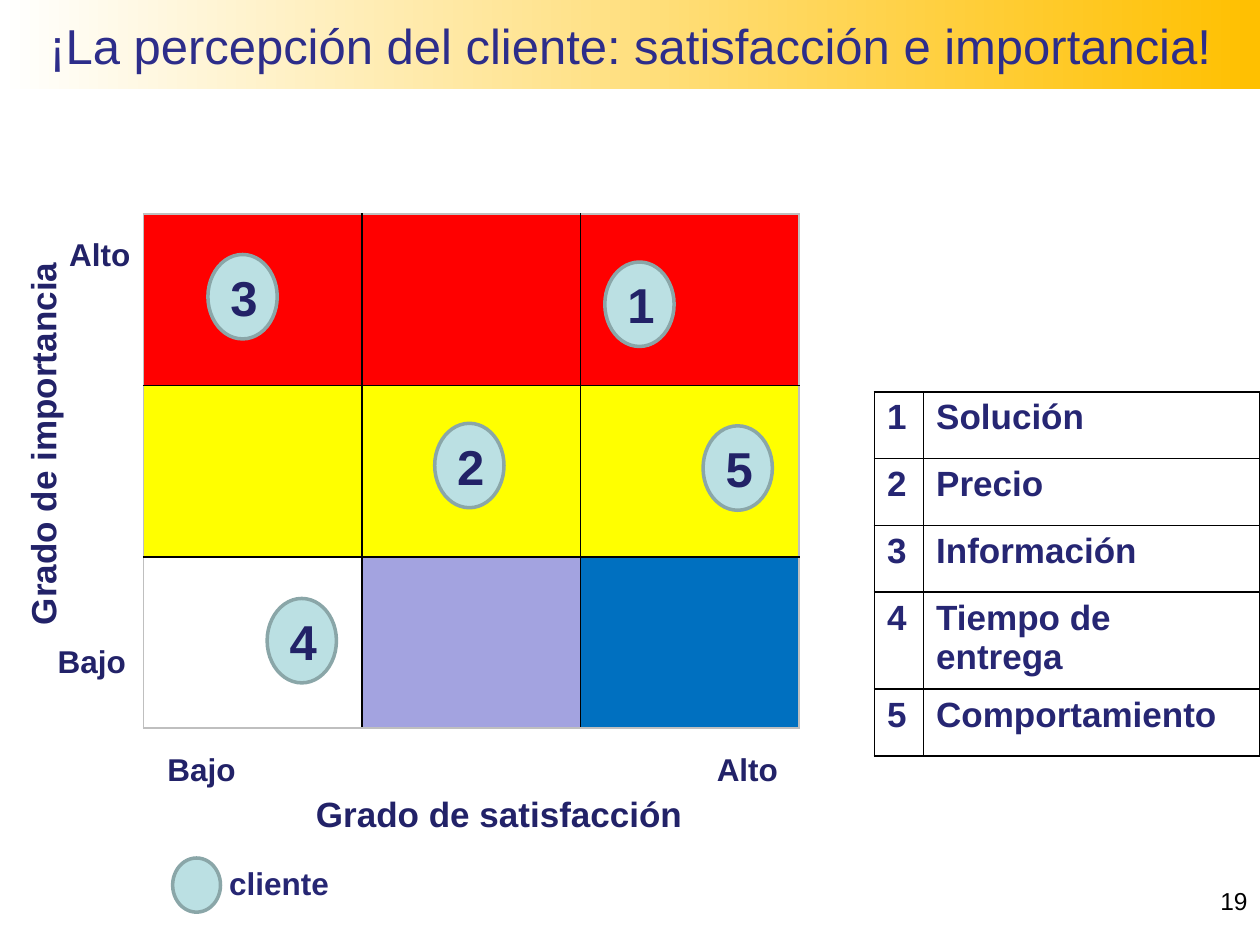
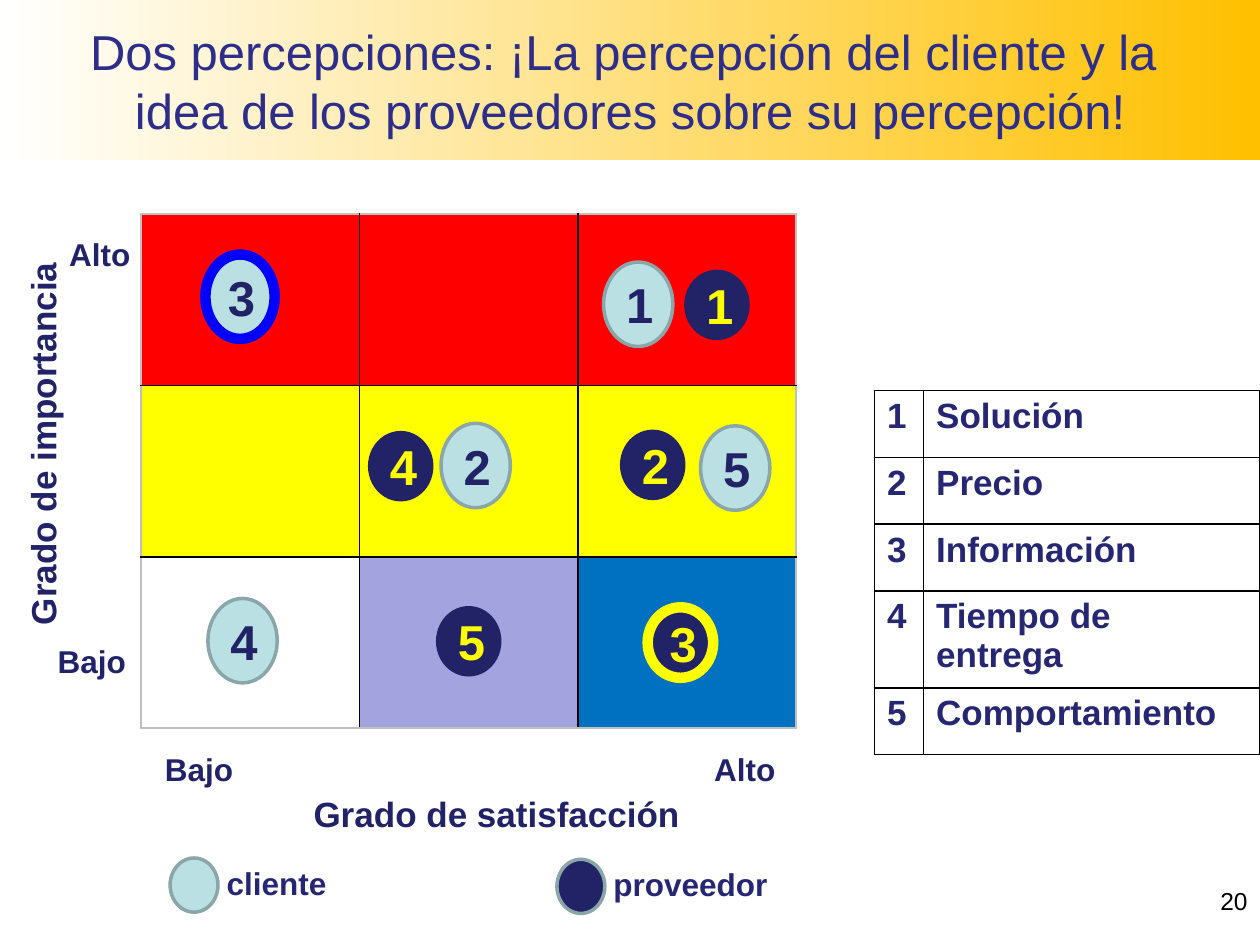
from pptx import Presentation
from pptx.dml.color import RGBColor
from pptx.enum import shapes, text
from pptx.oxml import parse_xml
from pptx.oxml.ns import nsdecls
from pptx.util import Inches, Pt

THEME = {
    "font": "Arial",
    "white": "FFFFFF", "gold": "FFC000", "title": "2D2D8A", "axis": "222268",
    "navy": "222267", "list": "262673", "pale": "BBE0E3", "edge": "8AA6A8",
    "yellow": "FFFF00", "blue": "0000FF", "black": "000000", "grey": "BFBFBF",
    "size": {"title": 28, "mark": 28, "axis": 20, "label": 18, "page": 14},
}
SIZE = THEME["size"]

ZONES = [["FF0000"] * 3, ["FFFF00"] * 3, ["FFFFFF", "A3A3E0", "0070C0"]]
ITEMS = ["Solución", "Precio", "Información", "Tiempo de entrega", "Comportamiento"]
ROWS = [0.53, 0.53, 0.53, 0.77, 0.53]

# fill, line, number colour, width, height
KINDS = {
    "cliente": ("pale", "edge", "navy", 0.55, 0.67),
    "proveedor": ("navy", None, "yellow", 0.52, 0.56),
}

# marks: number -> left, top; ring: the mark with a thick outline
SLIDES = [
    {
        "title": ["¡La percepción del cliente: satisfacción e importancia!"],
        "band": 0.71, "left": 1.14, "page": 19, "list": 3.11,
        "marks": {"cliente": {1: (4.8, 2.08), 2: (3.45, 3.36), 3: (1.65, 2.02),
                              4: (2.12, 4.75), 5: (5.58, 3.38)}},
        "rings": {},
        "key": {"cliente": (1.37, 6.81, 0.99)},
    },
    {
        "title": ["Dos percepciones: ¡La percepción del cliente y la ",
                  "idea de los proveedores sobre su percepción!"],
        "band": 1.27, "left": 1.12, "page": 20, "list": 3.1,
        "marks": {"proveedor": {1: (5.43, 2.14), 2: (4.92, 3.41), 3: (5.14, 4.82),
                                4: (2.92, 3.42), 5: (3.46, 4.81)},
                  "cliente": {1: (4.79, 2.08), 2: (3.5, 3.36), 3: (1.63, 2.02),
                              4: (1.65, 4.75), 5: (5.56, 3.38)}},
        "rings": {("cliente", 3): "blue", ("proveedor", 3): "yellow"},
        "key": {"cliente": (1.35, 6.81, 0.99), "proveedor": (4.42, 6.82, 1.42)},
    },
]


def shade(name):
    return RGBColor.from_string(THEME.get(name, name))


def write(frame, lines, size, color, bold=True, align=None):
    frame.text = "\n".join(lines)
    look = {"name": THEME["font"], "size": Pt(size), "bold": bold}
    for par in frame.paragraphs:
        par.alignment = align
        for run in par.runs:
            for key, value in look.items():
                setattr(run.font, key, value)
            run.font.color.rgb = shade(color)


def label(slide, words, box, size, color, wrap=False, **more):
    shape = slide.shapes.add_textbox(*map(Inches, box))
    shape.text_frame.word_wrap = wrap
    write(shape.text_frame, [words], size, color, **more)
    return shape


def oval(slide, box, fill, line=None, width=2):
    shape = slide.shapes.add_shape(shapes.MSO_SHAPE.OVAL, *map(Inches, box))
    shape.shadow.inherit = False
    shape.fill.solid()
    shape.fill.fore_color.rgb = shade(fill)
    if line:
        shape.line.color.rgb = shade(line)
        shape.line.width = Pt(width)
    else:
        shape.line.fill.background()
    return shape


def border(cell, colors):
    """Draw the left, right, top and bottom lines, in that order."""
    props = cell._tc.get_or_add_tcPr()
    for spot, (side, color) in enumerate(zip("LRTB", colors)):
        props.insert(spot, parse_xml(
            f'<a:ln{side} {nsdecls("a")} w="12700"><a:solidFill>'
            f'<a:srgbClr val="{THEME[color]}"/></a:solidFill></a:ln{side}>'))


def table(slide, left, top, cols, rows):
    box = map(Inches, (left, top, sum(cols), sum(rows)))
    grid = slide.shapes.add_table(len(rows), len(cols), *box).table
    grid.first_row = grid.horz_banding = False
    for col, width in zip(grid.columns, cols):
        col.width = Inches(width)
    for row, height in zip(grid.rows, rows):
        row.height = Inches(height)
    return grid


def title(slide, lines, height):
    band = slide.shapes.title
    place = {"left": 0, "top": 0, "width": Inches(10), "height": Inches(height)}
    for key, value in place.items():
        setattr(band, key, value)
    band.fill.gradient()
    band.fill.gradient_angle = 0
    for stop, color in zip(band.fill.gradient_stops, ("white", "gold")):
        stop.color.rgb = shade(color)
    frame = band.text_frame
    frame.auto_size = text.MSO_AUTO_SIZE.NONE
    frame.vertical_anchor = text.MSO_ANCHOR.MIDDLE
    write(frame, lines, SIZE["title"], "title", False, text.PP_ALIGN.CENTER)


def matrix(slide, left):
    grid = table(slide, left, 1.7, [5.2 / 3] * 3, [1.36] * 3)
    for r, row in enumerate(ZONES):
        for c, color in enumerate(row):
            cell = grid.cell(r, c)
            cell.fill.solid()
            cell.fill.fore_color.rgb = shade(color)
            outer = (c == 0, c == 2, r == 0, r == 2)
            border(cell, ["grey" if out else "black" for out in outer])


def axes(slide, left):
    name = label(slide, "Grado de importancia", (0.12, 1.63, 0.54, 3.43),
                 SIZE["axis"], "axis", True)
    name.text_frame._txBody.bodyPr.set("vert", "vert270")
    label(slide, "Grado de satisfacción", (left + 1.27, 6.24, 3.13, 0.44),
          SIZE["axis"], "axis")
    ends = [("Bajo", 0.36, 5.05, 0.74), ("Alto", 0.45, 1.82, 0.69),
            ("Bajo", left + 0.09, 5.9, 0.74), ("Alto", left + 4.45, 5.9, 0.69)]
    for words, x, y, width in ends:
        label(slide, words, (x, y, width, 0.4), SIZE["label"], "axis")


def legend(slide, top):
    grid = table(slide, 6.94, top, [0.39, 2.67], ROWS)
    for r, item in enumerate(ITEMS):
        for c, words in enumerate((str(r + 1), item)):
            cell = grid.cell(r, c)
            cell.fill.background()
            if c:
                cell.margin_right = Inches(0.15)
            write(cell.text_frame, [words], SIZE["axis"], "list")
            border(cell, ["black"] * 4)


def marks(slide, groups, rings):
    for kind, spots in groups.items():
        fill, line, ink, width, height = KINDS[kind]
        for number, (x, y) in spots.items():
            ring = rings.get((kind, number))
            shape = oval(slide, (x, y, width, height), fill, ring or line,
                         6 if ring else 2)
            shape.text_frame.vertical_anchor = text.MSO_ANCHOR.MIDDLE
            write(shape.text_frame, [str(number)], SIZE["mark"], ink,
                  align=text.PP_ALIGN.CENTER)


def keys(slide, entries):
    for kind, (x, y, width) in entries.items():
        oval(slide, (x, y, 0.38, 0.43), KINDS[kind][0], "edge")
        label(slide, kind, (x + 0.35, y, width, 0.4), SIZE["label"], "list")


def main():
    deck = Presentation()
    deck.slide_width, deck.slide_height = Inches(10), Inches(7.5)
    for data in SLIDES:
        slide = deck.slides.add_slide(deck.slide_layouts[5])
        title(slide, data["title"], data["band"])
        matrix(slide, data["left"])
        axes(slide, data["left"])
        legend(slide, data["list"])
        keys(slide, data["key"])
        marks(slide, data["marks"], data["rings"])
        label(slide, str(data["page"]), (7.67, 6.98, 2.33, 0.52), SIZE["page"],
              "black", True, bold=False, align=text.PP_ALIGN.RIGHT)
    deck.save("out.pptx")


if __name__ == "__main__":
    main()
